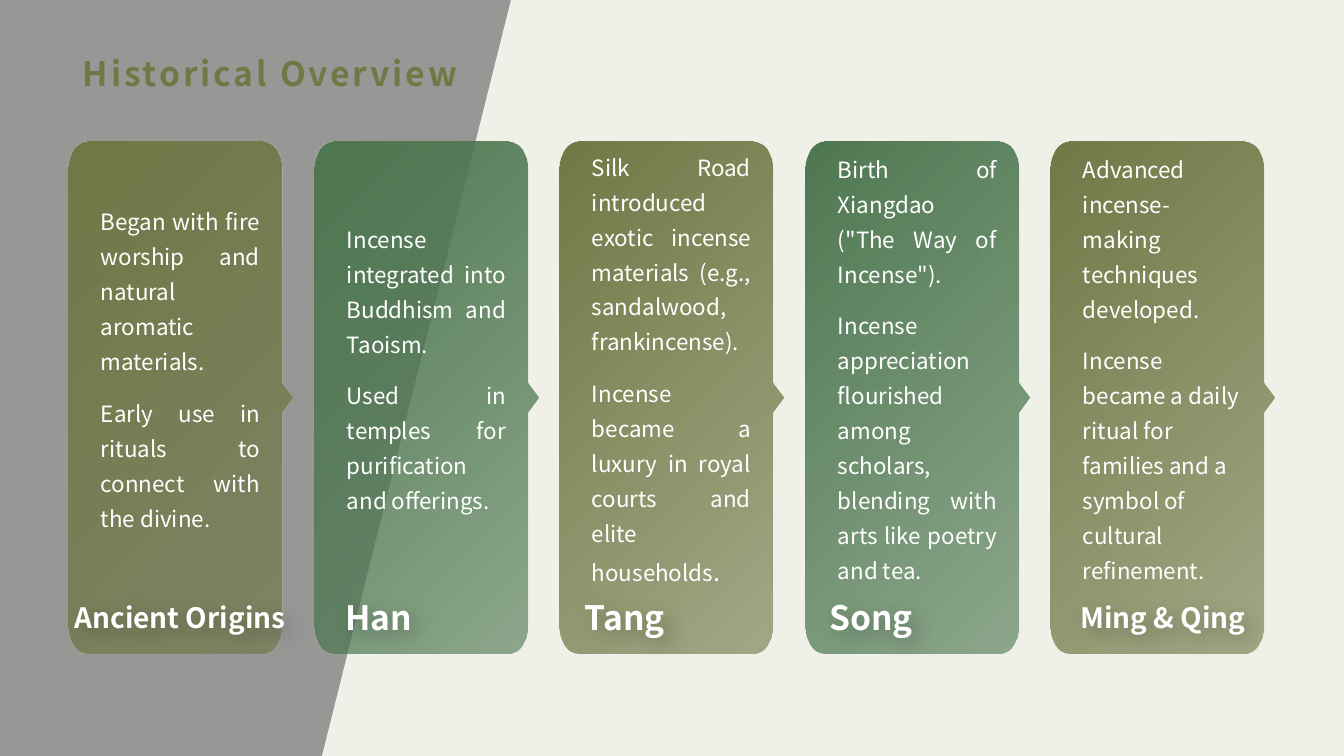
from lxml import etree
from pptx import Presentation, util as u
from pptx.dml.color import RGBColor
from pptx.enum import shapes as sh, text as tx
from pptx.oxml.ns import qn

PX = u.Inches(1) / 100.8
FONT = "Noto Sans CJK SC"
PAPER = RGBColor(0xFC, 0xFC, 0xFB)
BLACK = RGBColor(0, 0, 0)
CREAM = RGBColor(0xEF, 0xF1, 0xE8)
OLIVE = RGBColor(0x70, 0x79, 0x46)
GREEN = RGBColor(0x4E, 0x78, 0x51)
WHITE = RGBColor(0xFF, 0xFF, 0xFF)


def px(*lengths):
    return [round(length * PX) for length in lengths]


def write(paragraph, words, size=16, color=WHITE, bold=False, spacing=0):
    run = paragraph.add_run()
    run.text = words
    run.font.name = FONT
    run.font.size = u.Pt(size)
    run.font.bold = bold
    run.font.color.rgb = color
    if spacing:
        run._r.get_or_add_rPr().set("spc", str(spacing))


deck = Presentation()
deck.slide_width, deck.slide_height = px(1344, 756)
slide = deck.slides.add_slide(deck.slide_layouts[5])
slide.background.fill.solid()
slide.background.fill.fore_color.rgb = PAPER

veil = slide.shapes.add_shape(sh.MSO_SHAPE.RECTANGLE, *px(0, 0, 1344, 756))
veil.shadow.inherit = False
veil.line.fill.background()
veil.fill.solid()
veil.fill.fore_color.rgb = BLACK
veil_color = veil._element.spPr.find(".//" + qn("a:srgbClr"))
etree.SubElement(veil_color, qn("a:alpha")).set("val", "40000")

outline = slide.shapes.build_freeform(*px(1344, 0), scale=1)
outline.add_line_segments([px(511, 0), px(322, 756), px(1344, 756)])
panel = outline.convert_to_shape()
panel.shadow.inherit = False
panel.line.fill.background()
panel.fill.solid()
panel.fill.fore_color.rgb = CREAM

TOP, BOTTOM, BODY, TIP, MIDDLE = 142, 654, 213, 224, 398
CORNER_X, CORNER_Y = 19, 28
eras = [
    ("Ancient Origins", 20, 180, 220, "Began with fire worship and natural aromatic materials.",
     "Early use in rituals to connect with the divine."),
    ("Han", 24, 379, 90, "Incense integrated into Buddhism and Taoism.",
     "Used in temples for purification and offerings."),
    ("Tang", 24, 625, 90,
     "Silk Road introduced exotic incense materials (e.g., sandalwood, frankincense).",
     "Incense became a luxury in royal courts and elite households"),
    ("Song", 24, 871, 90, 'Birth of Xiangdao ("The Way of Incense").',
     "Incense appreciation flourished among scholars, blending with arts like poetry and tea."),
    ("Ming & Qing", 20, 1163, 176, "Advanced incense-making techniques developed.",
     "Incense became a daily ritual for families and a symbol of cultural refinement."),
]

for column, (era, label_size, label_center, label_width, *facts) in enumerate(eras):
    left = 69 + round(245.6 * column)
    right = left + BODY
    inner_left, inner_right = left + CORNER_X, right - CORNER_X
    inner_top, inner_bottom = TOP + CORNER_Y, BOTTOM - CORNER_Y
    outline = slide.shapes.build_freeform(*px(inner_left, TOP), scale=1)
    outline.add_line_segments([
        px(inner_right, TOP), px(right, inner_top),
        px(right, MIDDLE - 15), px(left + TIP, MIDDLE), px(right, MIDDLE + 15),
        px(right, inner_bottom), px(inner_right, BOTTOM),
        px(inner_left, BOTTOM), px(left, inner_bottom),
        px(left, inner_top), px(inner_left, TOP),
    ])
    card = outline.convert_to_shape()
    contour = card._element.spPr.find(".//" + qn("a:path"))
    knots = [(int(pt.get("x")), int(pt.get("y"))) for pt in contour.iter(qn("a:pt"))]
    for corner, sideways in ((2, True), (7, False), (9, True), (11, False)):
        begin, end = knots[corner - 1], knots[corner]
        vertex = (end[0], begin[1]) if sideways else (begin[0], end[1])
        bend = etree.Element(qn("a:cubicBezTo"))
        for x, y in (
            [b + 0.55 * (v - b) for b, v in zip(begin, vertex)],
            [e + 0.55 * (v - e) for e, v in zip(end, vertex)],
            end,
        ):
            etree.SubElement(bend, qn("a:pt"), x=str(round(x)), y=str(round(y)))
        contour.replace(contour[corner], bend)

    card.shadow.inherit = False
    card.line.fill.background()
    card.fill.gradient()
    card.fill.gradient_angle = 315
    for stop in card.fill.gradient_stops:
        stop.color.rgb = GREEN if column % 2 else OLIVE
    fade = card._element.spPr.findall(".//" + qn("a:srgbClr"))[-1]
    etree.SubElement(fade, qn("a:alpha")).set("val", "60000")

    frame = card.text_frame
    frame.word_wrap = True
    frame.vertical_anchor = tx.MSO_ANCHOR.MIDDLE
    frame.margin_left, frame.margin_top, frame.margin_right, frame.margin_bottom = px(32, 36, 33, 100)
    for order, fact in enumerate(facts):
        paragraph = frame.add_paragraph() if order else frame.paragraphs[0]
        paragraph.alignment = tx.PP_ALIGN.LEFT if era == "Ming & Qing" else tx.PP_ALIGN.JUSTIFY
        paragraph.line_spacing = 1.3
        paragraph.space_before = u.Pt(12 * order)
        write(paragraph, fact)
    if era == "Tang":
        write(paragraph, ".", size=18)

    label = slide.shapes.add_textbox(*px(label_center - label_width // 2, 582, label_width, 70))
    frame = label.text_frame
    frame.word_wrap = False
    frame.vertical_anchor = tx.MSO_ANCHOR.MIDDLE
    frame.margin_left = frame.margin_top = frame.margin_right = frame.margin_bottom = 0
    frame.paragraphs[0].alignment = tx.PP_ALIGN.CENTER
    write(frame.paragraphs[0], era, size=label_size, bold=True)
    effects = etree.SubElement(label._element.spPr, qn("a:effectLst"))
    glow = etree.SubElement(effects, qn("a:outerShdw"), blurRad="190500", dist="76200", dir="2700000")
    shade = etree.SubElement(glow, qn("a:srgbClr"), val="000000")
    etree.SubElement(shade, qn("a:alpha"), val="25000")

title = slide.shapes.title
title.left, title.top, title.width, title.height = px(73, 49, 1197, 48)
frame = title.text_frame
frame.word_wrap = True
frame.vertical_anchor = tx.MSO_ANCHOR.MIDDLE
frame.margin_left, frame.margin_top, frame.margin_right, frame.margin_bottom = px(10, 5, 10, 5)
frame.paragraphs[0].alignment = tx.PP_ALIGN.LEFT
write(frame.paragraphs[0], "Historical Overview", size=24, color=OLIVE, bold=True, spacing=200)
slide.shapes._spTree.append(title._element)

deck.save("out.pptx")
